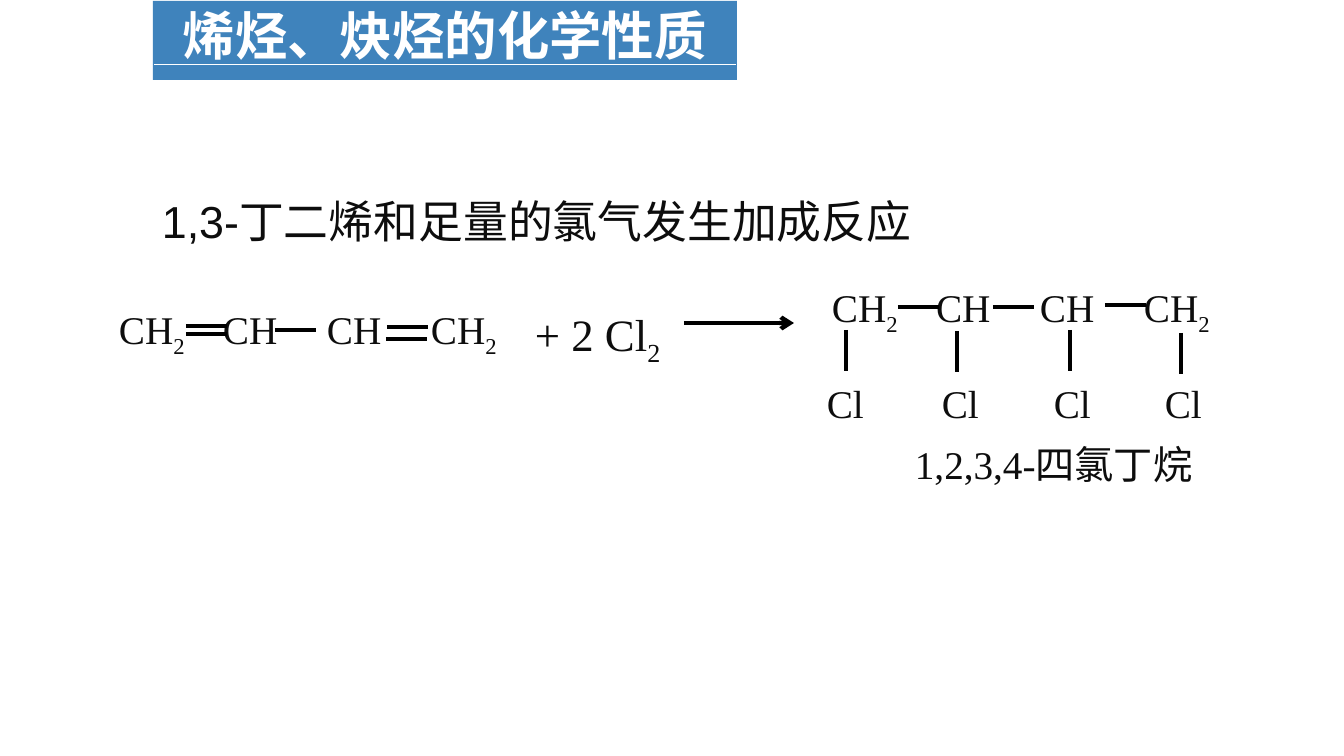
import collections

import lxml.etree
import pptx
import pptx.dml.color
import pptx.enum.shapes
import pptx.enum.text
import pptx.oxml.ns
import pptx.util

BLUE = pptx.dml.color.RGBColor(0x3F, 0x83, 0xBC)
WHITE = pptx.dml.color.RGBColor(0xFF, 0xFF, 0xFF)
BLACK = pptx.dml.color.RGBColor(0x00, 0x00, 0x00)
INK = pptx.dml.color.RGBColor(0x0D, 0x0D, 0x0D)
TIMES = "Times New Roman"
ARIAL = "Arial"
CJK = "Noto Sans CJK SC"

BOND = 41
CARBON_STEP = 104

Part = collections.namedtuple("Part", "text font baseline", defaults=(TIMES, 0))
SUB_TWO = Part("2", baseline=-25000)
CARBON_CHAIN = [Part("CH"), SUB_TWO, Part("\tCH\tCH\tCH"), SUB_TWO]


def px(length):
    return pptx.util.Emu(round(length * 914400 / 100.8))


def add_child(parent, tag, **attributes):
    return lxml.etree.SubElement(parent, pptx.oxml.ns.qn(tag), attributes)


class ReactionSlide:
    def __init__(self, deck):
        self.slide = deck.slides.add_slide(deck.slide_layouts[6])
        self.shapes = self.slide.shapes

    def band(self, left, top, width, height, color):
        band = self.shapes.add_shape(
            pptx.enum.shapes.MSO_SHAPE.RECTANGLE,
            px(left), px(top), px(width), px(height))
        band.shadow.inherit = False
        band.fill.solid()
        band.fill.fore_color.rgb = color
        band.line.fill.background()

    def line(self, start, end, color=BLACK, weight=3, arrow=False):
        line = self.shapes.add_connector(
            pptx.enum.shapes.MSO_CONNECTOR.STRAIGHT,
            px(start[0]), px(start[1]), px(end[0]), px(end[1]))
        line.line.color.rgb = color
        line.line.width = pptx.util.Pt(weight)
        if arrow:
            add_child(line.line._get_or_add_ln(), "a:tailEnd", type="arrow")
        add_child(line._element.spPr, "a:effectLst")

    def text(self, left, top, width, height, parts, size=28, color=INK,
             bold=False, spacing=1.5, align=pptx.enum.text.PP_ALIGN.LEFT):
        box = self.shapes.add_textbox(px(left), px(top), px(width), px(height))
        frame = box.text_frame
        frame.word_wrap = True
        frame.auto_size = pptx.enum.text.MSO_AUTO_SIZE.SHAPE_TO_FIT_TEXT
        paragraph = frame.paragraphs[0]
        paragraph.alignment = align
        paragraph.line_spacing = spacing
        for part in parts:
            run = paragraph.add_run()
            run.text = part.text
            run.font.name = part.font
            run.font.size = pptx.util.Pt(size)
            run.font.bold = bold
            run.font.color.rgb = color
            properties = run.font._element
            add_child(properties, "a:ea", typeface=CJK)
            if part.baseline:
                properties.set("baseline", str(part.baseline))
        return frame

    def chain(self, left, top):
        frame = self.text(left, top, 423, 58, CARBON_CHAIN, spacing=1.0)
        frame.vertical_anchor = pptx.enum.text.MSO_ANCHOR.MIDDLE
        frame.margin_left = frame.margin_right = px(6)
        frame.margin_top = frame.margin_bottom = px(6)
        stops = add_child(frame.paragraphs[0]._p.get_or_add_pPr(), "a:tabLst")
        for carbon in range(1, 4):
            add_child(stops, "a:tab", pos=str(px(CARBON_STEP * carbon)), algn="l")

    def bond(self, left, top, vertical=False):
        end = (left, top + BOND) if vertical else (left + BOND, top)
        self.line((left, top), end)


def main():
    deck = pptx.Presentation()
    deck.slide_width, deck.slide_height = px(1344), px(756)
    page = ReactionSlide(deck)

    page.band(153, 1, 584, 79, BLUE)
    page.line((154, 65), (736, 65), WHITE, 0.75)
    page.text(146, -2, 598, 137, [Part("烯烃、炔烃的化学性质", CJK)], 37.4, WHITE,
              bold=True, spacing=1.0, align=pptx.enum.text.PP_ALIGN.CENTER)

    page.text(152, 162, 1103, 92,
              [Part("1,3-", ARIAL), Part("丁二烯和足量的氯气发生加成反应")], 32)
    page.text(525, 271, 164, 92, [Part("+ 2 Cl"), SUB_TWO], 32)
    page.line((684, 323), (794, 323), arrow=True)
    page.text(905, 412, 350, 82, [Part("1,2,3,4-四氯丁烷")])

    page.chain(826, 281)
    for left, top in [(898, 307), (993, 307), (1105, 305)]:
        page.bond(left, top)
    for left, top in [(846, 330), (957, 331), (1070, 330), (1181, 333)]:
        page.bond(left, top, vertical=True)
    for left in (817, 932, 1044, 1155):
        page.text(left, 351, 100, 82, [Part("Cl")])

    page.chain(113, 303)
    for left, top in [(186, 326), (186, 334), (275, 330), (387, 327), (386, 339)]:
        page.bond(left, top)

    deck.save("out.pptx")


if __name__ == "__main__":
    main()
